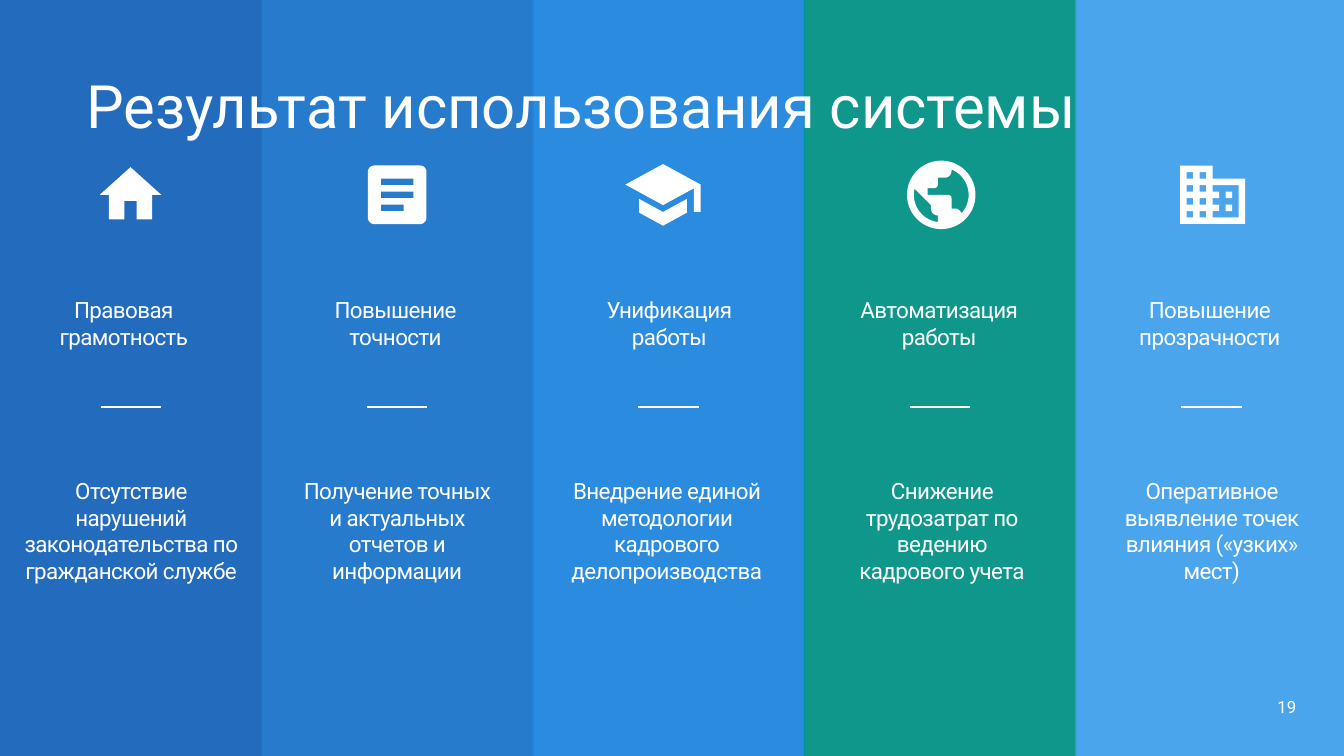
from dataclasses import dataclass
from math import cos, radians, sin

from lxml.etree import SubElement
from pptx import Presentation
from pptx.dml.color import RGBColor
from pptx.enum.shapes import MSO_CONNECTOR as Connector, MSO_SHAPE as Preset
from pptx.enum.text import MSO_ANCHOR as Anchor, MSO_AUTO_SIZE as AutoSize, PP_ALIGN as Align
from pptx.oxml.ns import qn
from pptx.util import Cm, Pt

COLORS = {"base": "A6AAA9", "white": "FFFFFF", "navy": "1565C0", "blue": "1976D2",
          "azure": "1E88E5", "teal": "009688", "sky": "42A5F5"}
FONT = "Roboto"
ICON_GRID = 24
FINENESS = 100
BAND_STEP = 6.84
FIRST_BAND = 6.58
FIRST_CENTER = 3.3
CENTER_START = 10.01


@dataclass
class Column:
    """Hold the content of one band; boxes are (left, width) in centimetres."""
    color: str
    heading: tuple
    heading_box: tuple
    body: str
    body_box: tuple
    icon: str
    icon_center: float
    icon_size: float


COLUMNS = [
    Column("navy", ("Правовая", "грамотность"), (1.37, 3.5),
           "Отсутствие нарушений законодательства по гражданской службе",
           (0.36, 5.89), "home", 3.29, 1.86),
    Column("blue", ("Повышение", "точности"), (8.22, 3.5),
           "Получение точных и актуальных отчетов и информации",
           (7.29, 5.44), "article", 10.01, 1.97),
    Column("azure", ("Унификация", "работы"), (15.12, 3.5),
           "Внедрение единой методологии кадрового делопроизводства",
           (14.15, 5.31), "school", 16.71, 2.07),
    Column("teal", ("Автоматизация", "работы"), (21.52, 4.3),
           "Снижение трудозатрат по ведению кадрового учета",
           (21.06, 5.36), "globe", 23.72, 2.07),
    Column("sky", ("Повышение", "прозрачности"), (28.54, 3.9),
           "Оперативное выявление точек влияния («узких» мест)",
           (27.86, 5.36), "building", 30.56, 1.96),
]


def box(left, top, right, bottom):
    """Return the corners of a rectangle."""
    return [(left, top), (right, top), (right, bottom), (left, bottom)]


def arc(center_x, center_y, radius, start, end, steps=24):
    """Return points along a circular arc, angles in degrees."""
    angles = [radians(start + (end - start) * step / steps) for step in range(steps + 1)]
    return [(center_x + radius * cos(angle), center_y + radius * sin(angle)) for angle in angles]


def icon_contours():
    """Return the contours of every icon on a 24-unit grid."""
    home = [(10, 20), (10, 14), (14, 14), (14, 20), (19, 20), (19, 12),
            (22, 12), (12, 3), (2, 12), (5, 12), (5, 20)]
    page = [point for x, y, start in ((5, 5, 180), (19, 5, 270), (19, 19, 0), (5, 19, 90))
            for point in arc(x, y, 2, start, start + 90, 8)]
    text_lines = [box(7, top, right, top + 2) for top, right in ((7, 17), (11, 17), (15, 14))]
    gown = [(5, 13.18), (5, 17.18), (12, 21), (19, 17.18), (19, 13.18), (12, 17)]
    cap = [(12, 3), (1, 9), (12, 15), (21, 10.09), (21, 17), (23, 17), (23, 9)]
    west = arc(12, 12, 8, 97, 193) + [(9, 15)] + arc(11, 16, 2, 180, 90)
    east = (arc(16, 18, 2, -18, -90) + [(15, 16)] + arc(14, 13, 1, 0, -90)
            + [(8, 12), (8, 10)] + arc(10, 9, 1, 90, 0) + [(11, 7)]
            + arc(13, 5, 2, 90, 0) + arc(12, 12, 8, -68, 43))
    walls = [(12, 7), (12, 3), (2, 3), (2, 21), (22, 21), (22, 7)]
    windows = [box(x, y, x + 2, y + 2) for x in (4, 8) for y in range(5, 18, 4)]
    wing = [(20, 19), (12, 19), (12, 17), (14, 17), (14, 15), (12, 15), (12, 13),
            (14, 13), (14, 11), (12, 11), (12, 9), (20, 9)]
    panes = [box(16, y, 18, y + 2) for y in (11, 15)]
    return {"home": [home], "article": [page, *text_lines], "school": [gown, cap],
            "globe": [arc(12, 12, 10, 0, 360, 72), west, east],
            "building": [walls, *windows, wing, *panes]}


def paint(shape, color):
    """Give a shape a plain fill without line or shadow."""
    shape.shadow.inherit = False
    shape.fill.solid()
    shape.fill.fore_color.rgb = RGBColor.from_string(COLORS[color])
    shape.line.fill.background()


def add_band(slide, left, width, height, color, opacity=100):
    """Add a full-height colour band."""
    band = slide.shapes.add_shape(Preset.RECTANGLE, Cm(left), 0, Cm(width), height)
    paint(band, color)
    if opacity < 100:
        fill_color = band._element.spPr.find(f".//{qn('a:srgbClr')}")
        SubElement(fill_color, qn("a:alpha"), val=str(opacity * 1000))


def add_text(slide, bounds, lines, size, align, spacing=None, inset=None, **frame_format):
    """Add a white text box with one paragraph per line."""
    frame = slide.shapes.add_textbox(*map(Cm, bounds)).text_frame
    if inset is not None:
        for side in ("left", "top", "right", "bottom"):
            setattr(frame, f"margin_{side}", Cm(inset))
    for name, value in {"word_wrap": True, **frame_format}.items():
        setattr(frame, name, value)
    for index, line in enumerate(lines):
        paragraph = frame.paragraphs[0] if index == 0 else frame.add_paragraph()
        paragraph.alignment = align
        run = paragraph.add_run()
        run.text = line
        for name, value in {"name": FONT, "size": Pt(size)}.items():
            setattr(run.font, name, value)
        run.font.color.rgb = RGBColor.from_string(COLORS["white"])
        if spacing is not None:
            run._r.get_or_add_rPr().set("spc", str(spacing))


def add_icon(slide, contours, center_x, center_y, size):
    """Add a white icon centred on a point."""
    builder = None
    for contour in contours:
        points = [(x * FINENESS, y * FINENESS) for x, y in contour]
        if builder is None:
            scale = Cm(size) / (ICON_GRID * FINENESS)
            builder = slide.shapes.build_freeform(*points[0], scale=scale)
        else:
            builder.move_to(*points[0])
        builder.add_line_segments(points[1:], close=True)
    paint(builder.convert_to_shape(Cm(center_x - size / 2), Cm(center_y - size / 2)), "white")


def add_divider(slide, center):
    """Add the short white line between heading and body."""
    y = Cm(10.26)
    divider = slide.shapes.add_connector(
        Connector.STRAIGHT, Cm(center - 0.76), y, Cm(center + 0.76), y)
    divider.line.width = Pt(1.5)
    divider.line.color.rgb = RGBColor.from_string(COLORS["white"])
    SubElement(divider._element.spPr, qn("a:effectLst"))


def add_column(slide, column, center, contours):
    """Add the texts, icon and divider of one band."""
    common = {"size": 16, "align": Align.CENTER, "spacing": -40,
              "auto_size": AutoSize.SHAPE_TO_FIT_TEXT}
    left, width = column.heading_box
    add_text(slide, (left, 7.47, width, 1.37), column.heading,
             inset=0, word_wrap=False, **common)
    left, width = column.body_box
    add_text(slide, (left, 11.81, width, 3.12), [column.body],
             inset=0.18, vertical_anchor=Anchor.MIDDLE, **common)
    add_icon(slide, contours, column.icon_center, 4.91, column.icon_size)
    add_divider(slide, center)


def main():
    """Build the slide and save it."""
    presentation = Presentation()
    presentation.slide_width, presentation.slide_height = Cm(33.87), Cm(19.05)
    height = presentation.slide_height
    slide = presentation.slides.add_slide(presentation.slide_layouts[6])
    add_band(slide, 0, 33.87, height, "base")
    for index, column in enumerate(COLUMNS):
        left = FIRST_BAND + BAND_STEP * (index - 1) if index else 0
        add_band(slide, left, 6.88 if index else 6.6, height, column.color, 90)
    icons = icon_contours()
    for index, column in enumerate(COLUMNS):
        center = CENTER_START + BAND_STEP * (index - 1) if index else FIRST_CENTER
        add_column(slide, column, center, icons[column.icon])
    add_text(slide, (31.37, 17.3, 1.55, 1.02), ["19"], 12, Align.RIGHT,
             vertical_anchor=Anchor.MIDDLE)
    add_text(slide, (1.93, 1.6, 26.62, 2.09), ["Результат использования системы"],
             42.7, Align.LEFT, auto_size=AutoSize.SHAPE_TO_FIT_TEXT)
    presentation.save("out.pptx")


if __name__ == "__main__":
    main()
